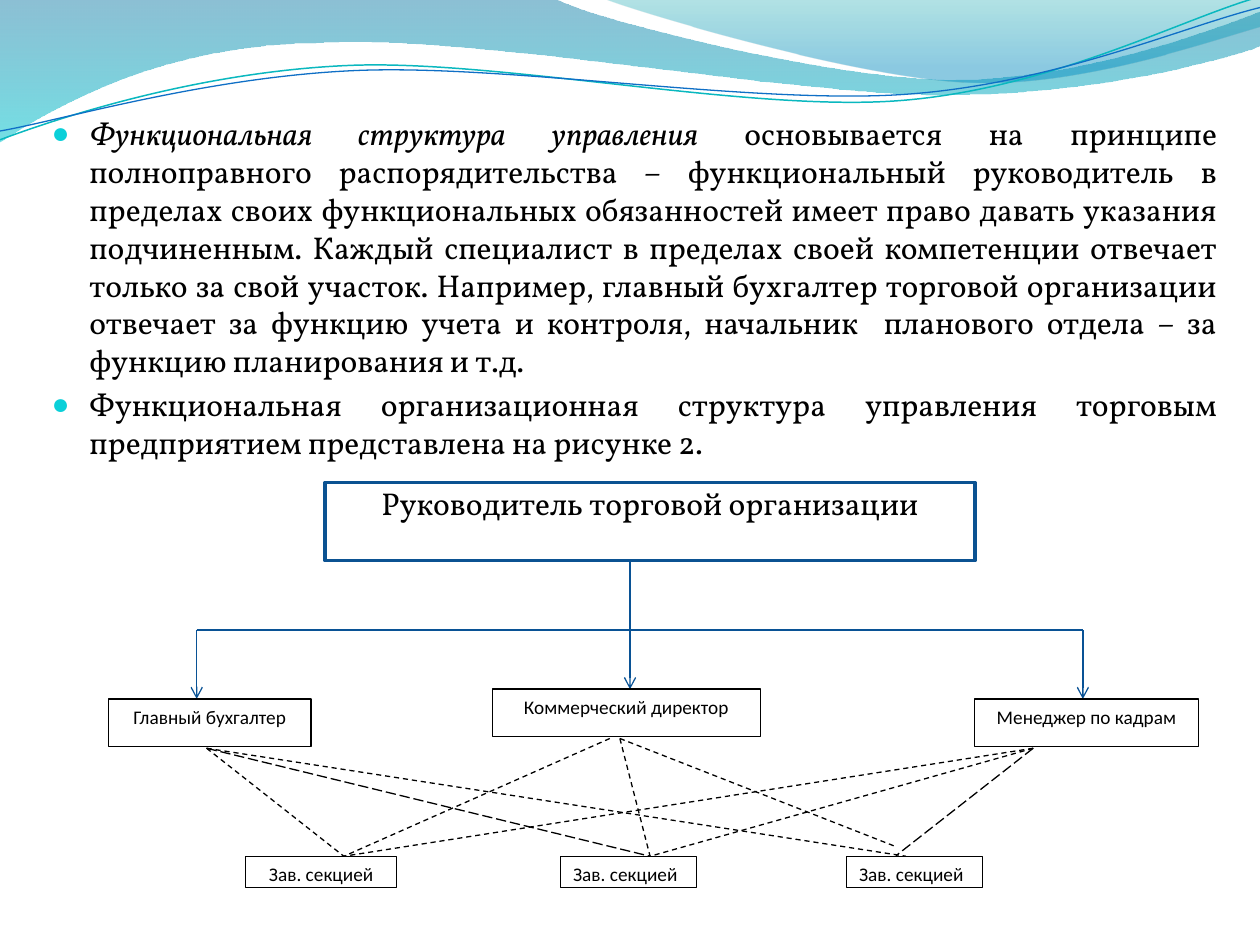
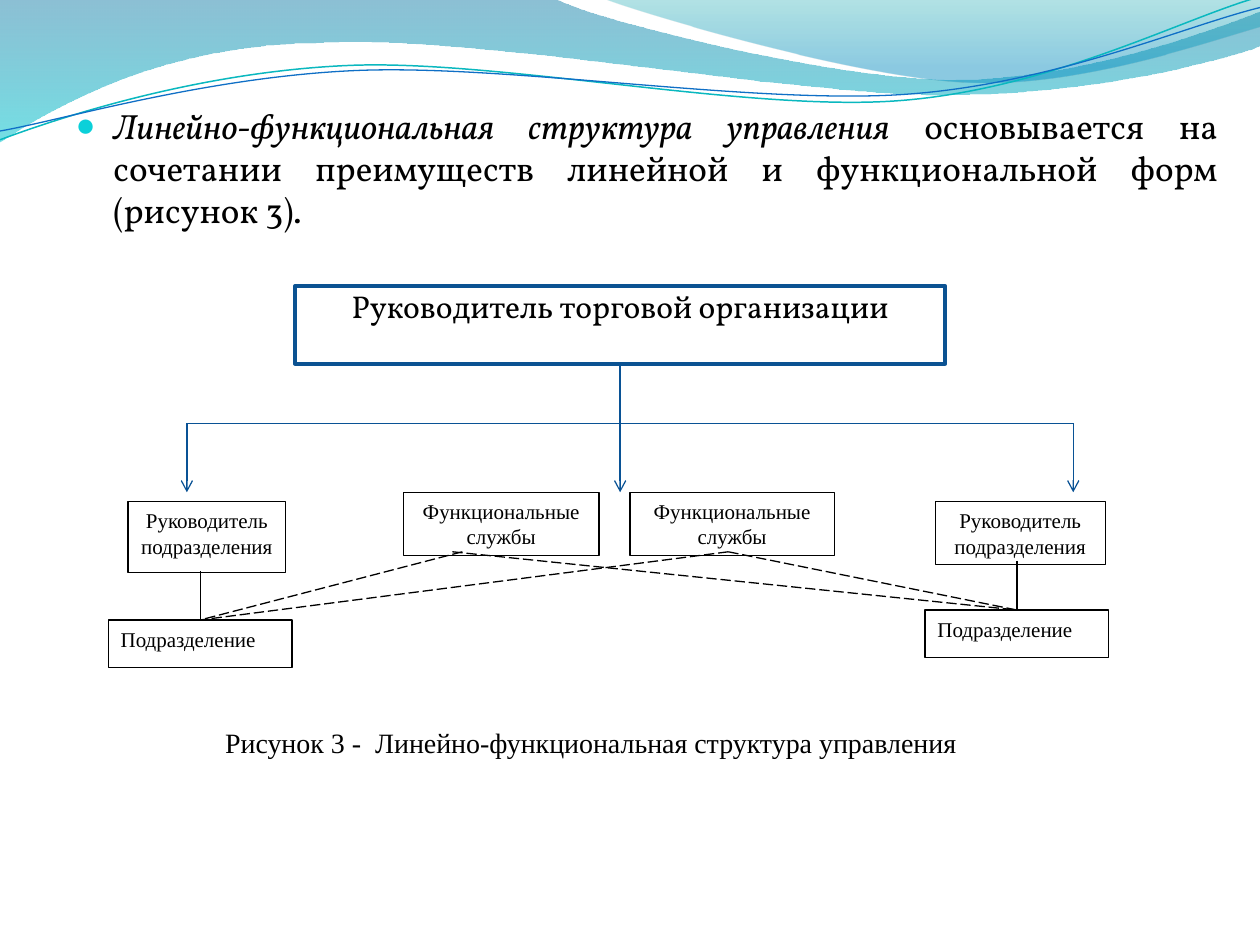
import pptx
import pptx.util
import pptx.dml.color
import pptx.enum.dml
import pptx.enum.shapes
import pptx.enum.text
import pptx.oxml.ns
from lxml import etree

Pt = pptx.util.Pt
qn = pptx.oxml.ns.qn
ALIGN = pptx.enum.text.PP_ALIGN
DASH = pptx.enum.dml.MSO_LINE.DASH
LONG_DASH = pptx.enum.dml.MSO_LINE.LONG_DASH

BLACK, WHITE = "000000", "FFFFFF"
HEAD_LINE, BRANCH, BULLET = "0B5292", "095295", "0BD0D9"
SERIF, SANS, TIMES = "Vollkorn", "Calibri", "Times New Roman"
HEAD_TEXT = "Руководитель торговой организации"
HEAD_SIZE = (371.52, 44.64)

# Wave outlines: a pair is a straight step, six numbers are a cubic curve.
BANDS = [
    ([(0, -0.72), (316.8, -0.72), (342.72, 12.24, 478.08, 45.36, 545.76, 45.36),
      (614.16, 45.36, 689.76, 18.72, 720, 6.48), (720.72, 25.92),
      (707.76, 31.68, 626.4, 54.72, 537.12, 54), (447.84, 54, 275.04, 20.16, 185.04, 24.48),
      (92.88, 25.2, 33.12, 59.76, -0.72, 81.36)],
     [(0, "0074A1", 45), (1, "00C6CF", 55)]),
    ([(344.88, -0.72), (366.48, 7.92, 491.04, 44.64, 553.68, 46.8),
      (616.32, 49.68, 691.92, 23.04, 720, 15.12), (720, 0)],
     [(0, "00A1A9", 30), (0.8, "008BBF", 45)]),
]
CURVES = [
    ([(0, 79.92), (34.56, 66.96, 113.76, 41.04, 199.44, 37.44),
      (284.4, 33.84, 426.96, 64.08, 513.36, 57.6),
      (599.76, 51.12, 675.36, 10.8, 718.56, -1.44)], "0AB8BF", 0.85),
    ([(0, 74.88), (33.84, 69.12, 118.08, 43.92, 203.76, 40.32),
      (290.16, 36.72, 429.84, 59.76, 516.24, 54),
      (601.92, 48.24, 676.08, 15.12, 720, 4.32)], "0F6FC6", 0.75),
]


def rgb(color):
    return pptx.dml.color.RGBColor.from_string(color)


def add_xml(parent, tag, **attributes):
    return etree.SubElement(parent, qn(tag), {k: str(v) for k, v in attributes.items()})


class Deck:
    def __init__(self):
        self.prs = pptx.Presentation()
        self.prs.slide_width, self.prs.slide_height = Pt(720), Pt(540)
        self.layout = self.prs.slide_layouts[1]
        self.s = None

    def new_slide(self):
        self.s = self.prs.slides.add_slide(self.layout)
        title = self.s.shapes.title.element
        title.getparent().remove(title)

    def outline(self, steps, close):
        """Build the outline through its anchor points, then bend the curved steps."""
        anchors = [(Pt(step[-2]), Pt(step[-1])) for step in steps]
        builder = self.s.shapes.build_freeform(*anchors[0], scale=1.0)
        builder.add_line_segments(anchors[1:], close=close)
        sp = builder.convert_to_shape()
        sp.shadow.inherit = False
        segments = list(sp.element.iter(qn("a:lnTo")))
        for segment, step in zip(segments, steps[1:]):
            if len(step) == 6:
                bend = etree.Element(qn("a:cubicBezTo"))
                for x, y in zip(step[::2], step[1::2]):
                    add_xml(bend, "a:pt", x=Pt(x) - sp.left, y=Pt(y) - sp.top)
                segment.getparent().replace(segment, bend)
        return sp

    def band(self, steps, stops):
        sp = self.outline(steps, True)
        sp.line.fill.background()
        sp.fill.gradient()
        sp.fill.gradient_angle = 270
        for stop, (position, color, _) in zip(sp.fill.gradient_stops, stops):
            stop.position = position
            stop.color.rgb = rgb(color)
        for clr, (_, _, alpha) in zip(sp.element.spPr.iter(qn("a:srgbClr")), stops):
            add_xml(clr, "a:alpha", val=alpha * 1000)
        return sp

    def curve(self, steps, color, width):
        sp = self.outline(steps, False)
        sp.fill.background()
        sp.line.color.rgb = rgb(color)
        sp.line.width = Pt(width)
        return sp

    def waves_to_layout(self):
        """Draw the waves once and move them behind everything on the layout."""
        waves = [self.band(*b) for b in BANDS] + [self.curve(*c) for c in CURVES]
        tree = self.layout.placeholders[0].element.getparent()
        for i, sp in enumerate(waves):
            next(sp.element.iter(qn("p:cNvPr"))).set("id", str(100 + i))
            tree.insert(2 + i, sp.element)

    def format_text(self, p, font, size, align):
        p.alignment = align
        for r in p.runs:
            r.font.name, r.font.size = font, Pt(size)
            r.font.color.rgb = rgb(BLACK)

    def body(self, box, size, paragraphs):
        """Fill the body with bullets, each an italic lead and a plain rest."""
        sp = self.s.placeholders[1]
        sp.left, sp.top, sp.width, sp.height = map(Pt, box)
        tf = sp.text_frame
        tf.auto_size = pptx.enum.text.MSO_AUTO_SIZE.NONE
        for i, (lead, rest) in enumerate(paragraphs):
            p = tf.add_paragraph() if i else tf.paragraphs[0]
            for text, italic in ((lead, True), (rest, False)):
                if text:
                    r = p.add_run()
                    r.text, r.font.italic = text, italic
            self.format_text(p, SERIF, size, ALIGN.JUSTIFY)
            pPr = p._p.get_or_add_pPr()
            pPr.set("marL", str(Pt(21.6)))
            pPr.set("indent", str(-Pt(21.6)))
            add_xml(add_xml(pPr, "a:buClr"), "a:srgbClr", val=BULLET)
            add_xml(pPr, "a:buSzPct", val=95000)
            add_xml(pPr, "a:buChar", char="●")

    def box(self, text, box, font, size, align=ALIGN.CENTER, line=BLACK, width=0.75):
        sp = self.s.shapes.add_shape(pptx.enum.shapes.MSO_SHAPE.RECTANGLE, *map(Pt, box))
        sp.shadow.inherit = False
        sp.fill.solid()
        sp.fill.fore_color.rgb = rgb(WHITE)
        sp.line.color.rgb = rgb(line)
        sp.line.width = Pt(width)
        tf = sp.text_frame
        tf.word_wrap = True
        tf.vertical_anchor = pptx.enum.text.MSO_ANCHOR.TOP
        tf.text = text
        self.format_text(tf.paragraphs[0], font, size, align)
        return sp

    def head(self, left, top):
        sp = self.box(HEAD_TEXT, (left, top, *HEAD_SIZE), SERIF, 18, line=HEAD_LINE, width=2)
        sp.text_frame.margin_top = Pt(0.6)
        return sp

    def caption(self, text, box):
        sp = self.s.shapes.add_textbox(*map(Pt, box))
        tf = sp.text_frame
        tf.word_wrap = False
        tf.vertical_anchor = pptx.enum.text.MSO_ANCHOR.MIDDLE
        tf.text = text
        self.format_text(tf.paragraphs[0], TIMES, 16, ALIGN.CENTER)

    def line(self, start, end, color=BLACK, dash=None, arrow=False):
        """Join points or boxes: a box is left at its bottom and entered at its top."""
        x1, y1 = start if isinstance(start, tuple) else (0, 0)
        x2, y2 = end if isinstance(end, tuple) else (0, 0)
        conn = self.s.shapes.add_connector(
            pptx.enum.shapes.MSO_CONNECTOR.STRAIGHT, Pt(x1), Pt(y1), Pt(x2), Pt(y2))
        if not isinstance(start, tuple):
            conn.begin_connect(start, 2)
        if not isinstance(end, tuple):
            conn.end_connect(end, 0)
        conn.line.color.rgb = rgb(color)
        conn.line.width = Pt(0.75)
        if dash:
            conn.line.dash_style = dash
        if arrow:
            add_xml(conn.element.spPr.get_or_add_ln(), "a:tailEnd", type="arrow")
        add_xml(conn.element.spPr, "a:effectLst")

    def branches(self, start, stem_end, left, right, bar_y, arrow_y):
        """Draw a stem from the head and a bar with an arrow down at each end."""
        self.line(start, stem_end, BRANCH, arrow=True)
        self.line((left, bar_y), (right, bar_y), BRANCH)
        for x in (left, right):
            self.line((x, bar_y), (x, arrow_y), BRANCH, arrow=True)


def functional_slide(deck):
    deck.body((22.32, 61.8, 680.4, 466.56), 18, [
        ("Функциональная структура управления ",
         "основывается на принципе полноправного распорядительства – функциональный "
         "руководитель в пределах своих функциональных обязанностей имеет право давать "
         "указания подчиненным. Каждый специалист в пределах своей компетенции отвечает "
         "только за свой участок. Например, главный бухгалтер торговой организации отвечает "
         "за функцию учета и контроля, начальник  планового отдела – за функцию "
         "планирования и т.д."),
        ("", "Функциональная организационная структура управления торговым предприятием "
             "представлена на рисунке 2."),
    ])
    deck.head(185.7, 275.76)
    deck.branches((360, 320.4), (360, 393.84), 112.4, 618.8, 360, 399.4)

    for text, box in (("Главный бухгалтер", (61.92, 399.5, 115.92, 27)),
                      ("Коммерческий директор", (281.3, 393.8, 153.36, 27)),
                      ("Менеджер по кадрам", (556.8, 399.5, 128.16, 27))):
        deck.box(text, box, SANS, 11)
    for left, width, align in ((140.4, 86.4, ALIGN.CENTER), (320.4, 77.76, ALIGN.LEFT),
                               (483.84, 77.76, ALIGN.LEFT)):
        deck.box("Зав. секцией", (left, 489.3, width, 18), SANS, 11, align)

    first, second, third = (196.5, 489.3), (371.5, 489.3), (512, 489)
    accountant, director, manager = (118.08, 427.6), (354.24, 422), (590.4, 427.6)
    for start, end, dash in (
            (accountant, first, DASH), (accountant, second, LONG_DASH),
            (accountant, (517.68, 489.3), DASH),
            ((348.48, 422), first, DASH), (director, second, DASH),
            (director, (512, 483.84), DASH),
            (manager, first, DASH), (manager, second, DASH), (manager, third, LONG_DASH)):
        deck.line(start, end, dash=dash)


def line_functional_slide(deck):
    deck.body((36, 56, 667.2, 442.08), 20, [
        ("Линейно-функциональная структура управления ",
         "основывается на сочетании преимуществ линейной и функциональной форм "
         "(рисунок 3)."),
    ])
    head = deck.head(168.6, 163.3)
    deck.branches(head, (354.36, 281.3), 106.8, 613.3, 241.9, 281.3)

    for text, box in (
            ("Руководитель подразделения", (73.2, 286.7, 90, 40.3)),
            ("Функциональные службы", (230.5, 281.3, 111.8, 36)),
            ("Функциональные службы", (360, 281.3, 116.8, 36)),
            ("Руководитель подразделения", (534.4, 286.7, 97.2, 36))):
        deck.box(text, box, TIMES, 12)

    for left, top, manager_y, left_service in ((61.9, 354.3, 326.3, (264.2, 315.3)),
                                               (528.6, 348.6, 320.5, (258.5, 315.3))):
        unit = deck.box("Подразделение", (left, top, 105, 27), TIMES, 12, ALIGN.LEFT)
        deck.line((left + 52.5, manager_y), unit)
        for service in (left_service, (416.2, 315.3)):
            deck.line(service, unit, dash=LONG_DASH)

    deck.caption("Рисунок 3 -  Линейно-функциональная структура управления",
                 (118.1, 410.7, 439.2, 26.64))


def main():
    deck = Deck()
    deck.new_slide()
    deck.waves_to_layout()
    functional_slide(deck)
    deck.new_slide()
    line_functional_slide(deck)
    deck.prs.save("out.pptx")


if __name__ == "__main__":
    main()
